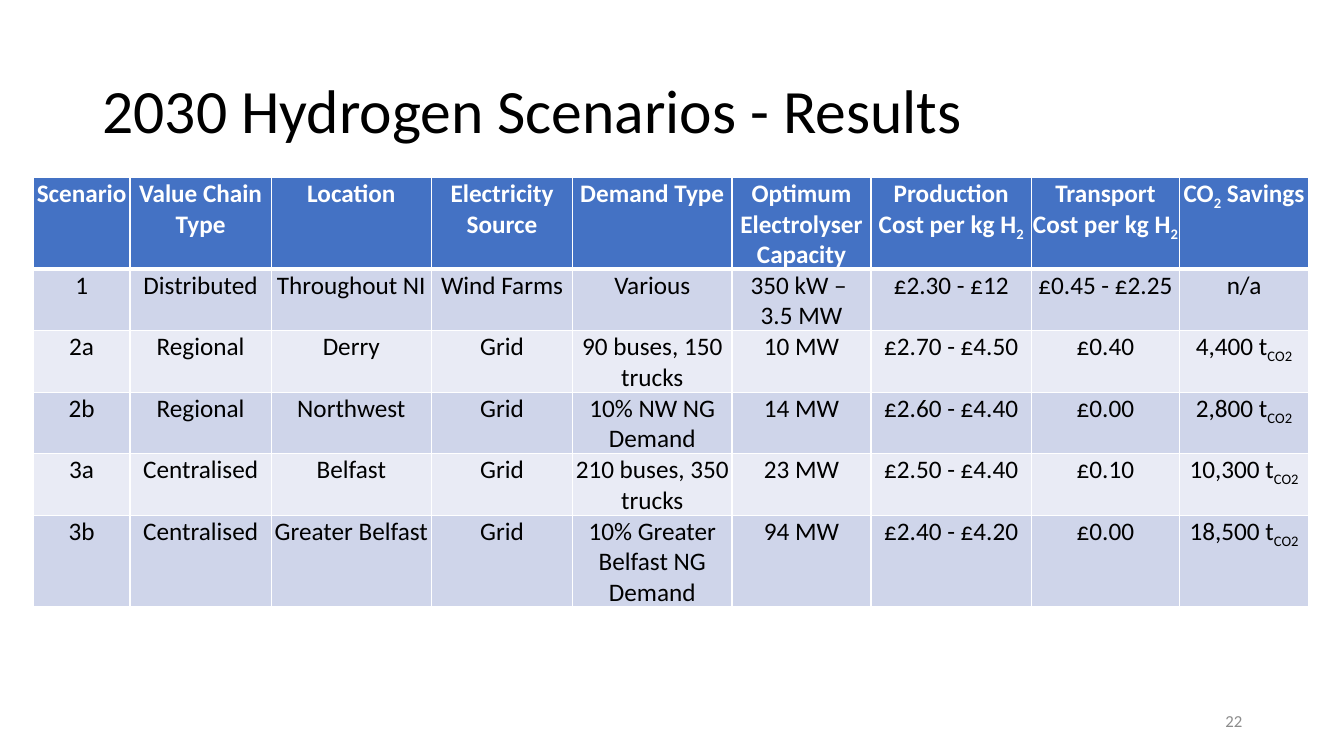
from lxml import etree
from pptx import Presentation
from pptx.dml.color import RGBColor
from pptx.enum.text import MSO_ANCHOR, PP_ALIGN
from pptx.oxml.ns import qn
from pptx.util import Inches, Pt

CENTER, LEFT, RIGHT = PP_ALIGN.CENTER, PP_ALIGN.LEFT, PP_ALIGN.RIGHT
MIDDLE = MSO_ANCHOR.MIDDLE
FONT = "Calibri"
COLORS = {"text": "000000", "header": "4472C4", "white": "FFFFFF",
          "band_dark": "CFD5EA", "band_light": "E9EBF5", "number": "8C8C8C"}

COL_WIDTHS = [0.96, 1.4, 1.59, 1.4, 1.58, 1.38, 1.59, 1.47, 1.28]
HEADER_HEIGHT, ROW_HEIGHT = 0.75, 0.41
# Text between underscores is set as subscript.
RESULTS = [
    ["Scenario", "Value Chain Type", "Location", "Electricity Source", "Demand Type",
     "Optimum Electrolyser Capacity", "Production Cost per kg H_2_",
     "Transport Cost per kg H_2_", "CO_2_ Savings"],
    ["1", "Distributed", "Throughout NI", "Wind Farms", "Various",
     "350 kW – \n3.5 MW", "£2.30 - £12", "£0.45 - £2.25", "n/a"],
    ["2a", "Regional", "Derry", "Grid", "90 buses, 150 trucks",
     "10 MW", "£2.70 - £4.50", "£0.40", "4,400 t_CO2_"],
    ["2b", "Regional", "Northwest", "Grid", "10% NW NG Demand",
     "14 MW", "£2.60 - £4.40", "£0.00", "2,800 t_CO2_"],
    ["3a", "Centralised", "Belfast", "Grid", "210 buses, 350 trucks",
     "23 MW", "£2.50 - £4.40", "£0.10", "10,300 t_CO2_"],
    ["3b", "Centralised", "Greater Belfast", "Grid", "10% Greater Belfast NG Demand",
     "94 MW", "£2.40 - £4.20", "£0.00", "18,500 t_CO2_"],
]


def rgb(name):
    return RGBColor.from_string(COLORS[name])


def style_font(font, size, color, bold=False):
    font.name, font.size, font.bold = FONT, Pt(size), bold
    font.color.rgb = rgb(color)


def add_label(s, box, text, size, color, align):
    """Place one line of text, centred vertically in box (inches)."""
    tf = s.shapes.add_textbox(*map(Inches, box)).text_frame
    tf.word_wrap = True
    tf.vertical_anchor = MIDDLE
    tf.text = text
    p = tf.paragraphs[0]
    p.alignment = align
    p.line_spacing = 0.9 if align == LEFT else 1.0
    style_font(p.runs[0].font, size, color)


def set_borders(cell, widths):
    """Draw white cell borders; widths maps L, R, T and B to points."""
    tc_pr = cell._tc.get_or_add_tcPr()
    for side, width in widths.items():
        ln = etree.SubElement(tc_pr, qn(f"a:ln{side}"), w=str(Pt(width)))
        fill = etree.SubElement(ln, qn("a:solidFill"))
        etree.SubElement(fill, qn("a:srgbClr"), val=COLORS["white"])


def fill_cell(cell, text, row):
    header = row == 0
    cell.margin_left = cell.margin_right = cell.margin_top = Inches(0.01)
    cell.margin_bottom = 0
    set_borders(cell, {"L": 1, "R": 1, "T": 3 if row == 1 else 1, "B": 3 if header else 1})
    cell.fill.solid()
    cell.fill.fore_color.rgb = rgb(
        "header" if header else "band_dark" if row % 2 else "band_light")
    tf = cell.text_frame
    tf.text = text.replace("_", "")
    for p, line in zip(tf.paragraphs, text.split("\n")):
        p.alignment = CENTER
        p.text = ""
        for i, part in enumerate(line.split("_")):
            if not part:
                continue
            r = p.add_run()
            r.text = part
            style_font(r.font, 18, "white" if header else "text", header)
            if i % 2:
                r.font._element.set("baseline", "-25000")


def add_results_table(s, box):
    frame = s.shapes.add_table(len(RESULTS), len(COL_WIDTHS), *map(Inches, box))
    table = frame.table
    for col, width in zip(table.columns, COL_WIDTHS):
        col.width = Inches(width)
    for i, values in enumerate(RESULTS):
        table.rows[i].height = Inches(ROW_HEIGHT if i else HEADER_HEIGHT)
        for j, text in enumerate(values):
            fill_cell(table.cell(i, j), text, i)
    frame.height = Inches(box[3])


def main():
    prs = Presentation()
    prs.slide_width, prs.slide_height = Inches(13.33), Inches(7.5)
    s = prs.slides.add_slide(prs.slide_layouts[6])
    add_label(s, (0.92, 0.4, 11.5, 1.45), "2030 Hydrogen Scenarios - Results",
              44, "text", LEFT)
    add_results_table(s, (0.33, 1.76, 12.67, 4.25))
    add_label(s, (9.42, 6.95, 3, 0.4), "22", 12, "number", RIGHT)
    prs.save("out.pptx")


if __name__ == "__main__":
    main()
